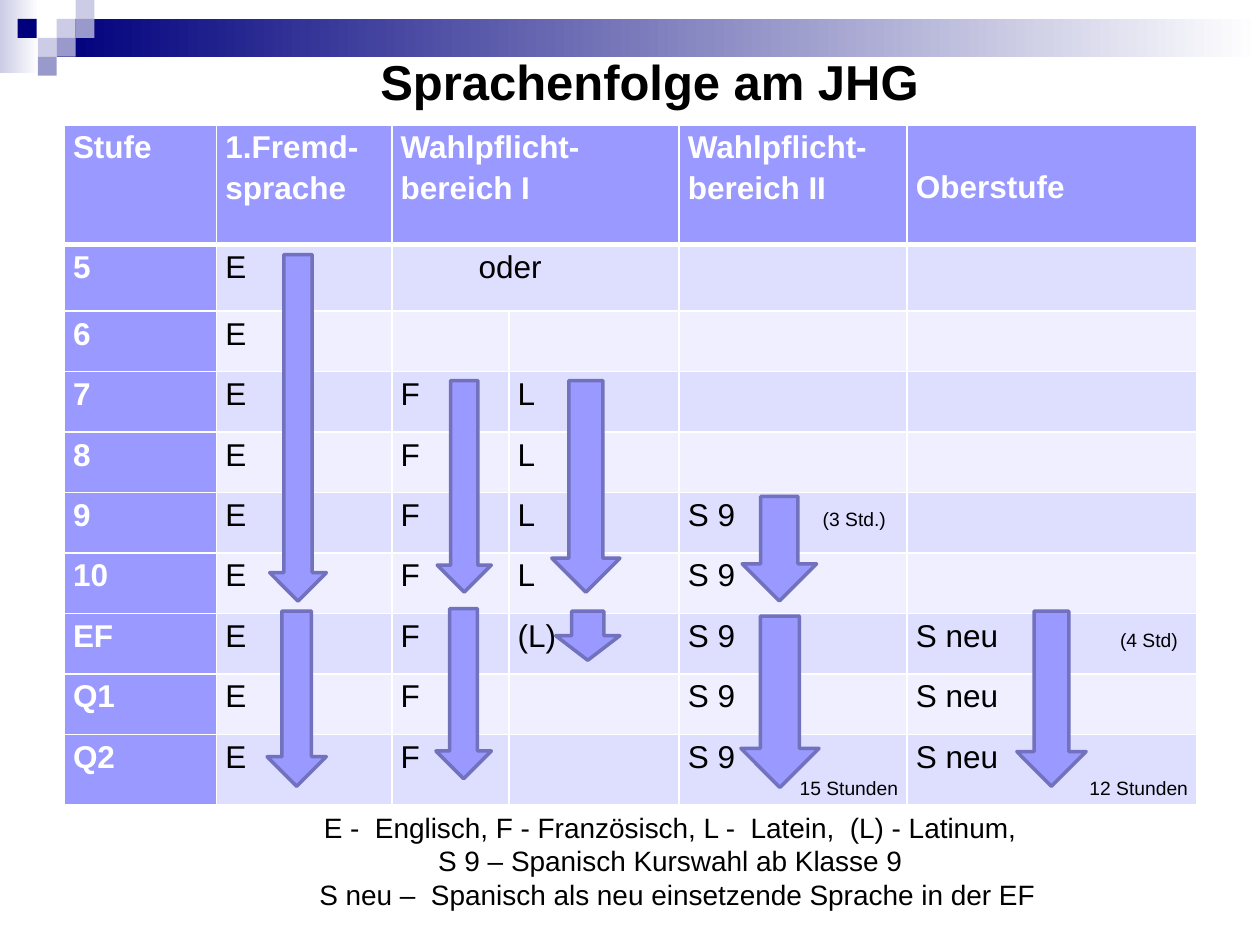
from lxml import etree
from pptx import Presentation
from pptx.dml.color import RGBColor
from pptx.enum.shapes import MSO_SHAPE
from pptx.enum.text import MSO_ANCHOR, PP_ALIGN
from pptx.oxml.ns import qn
from pptx.util import Inches, Pt

COLORS = {
    "navy": "00007D", "lavender": "CCCCE6", "violet": "9999CC", "white": "FFFFFF",
    "black": "000000", "accent": "9999FF", "outline": "7171BD",
    "odd_band": "DEDEFF", "even_band": "EFEFFF",
}


def add_run(paragraph, text, size, color="black", bold=False):
    run = paragraph.add_run()
    run.text = text
    run.font.name = "Arial"
    run.font.size = Pt(size)
    run.font.bold = bold
    run.font.color.rgb = RGBColor.from_string(COLORS[color])


def set_border(cell, side, width):
    """Draw a white line on one side (L, R, T or B) of a cell, ahead of its fill."""
    properties = cell._tc.get_or_add_tcPr()
    line = etree.Element(qn(f"a:ln{side}"), w=str(Pt(width)))
    fill = etree.SubElement(line, qn("a:solidFill"))
    etree.SubElement(fill, qn("a:srgbClr"), val=COLORS["white"])
    position = sum(child.tag.startswith(qn("a:ln")) for child in properties)
    properties.insert(position, line)


presentation = Presentation()
presentation.slide_width = Inches(10)
presentation.slide_height = Inches(7.5)
slide = presentation.slides.add_slide(presentation.slide_layouts[6])

# Header decoration: two fading bars, then small squares
bars = [(0, 0, 0.31, 0.58, "lavender"), (0.45, 0.15, 9.55, 0.3, "navy")]
squares = [
    (0.45, 0.15, "lavender"), (0.6, 0, "lavender"), (0.6, 0.15, "violet"),
    (0.3, 0.3, "lavender"), (0.14, 0.15, "navy"), (0.45, 0.3, "violet"),
    (0.3, 0.45, "violet"),
]
for left, top, width, height, color in bars:
    bar = slide.shapes.add_shape(
        MSO_SHAPE.RECTANGLE, Inches(left), Inches(top), Inches(width), Inches(height))
    bar.shadow.inherit = False
    bar.line.fill.background()
    bar.fill.gradient()
    bar.fill.gradient_angle = 0
    for stop, stop_color, position in zip(bar.fill.gradient_stops, (color, "white"), (0, 1)):
        stop.color.rgb = RGBColor.from_string(COLORS[stop_color])
        stop.position = position
for left, top, color in squares:
    square = slide.shapes.add_shape(
        MSO_SHAPE.RECTANGLE, Inches(left), Inches(top), Inches(0.15), Inches(0.15))
    square.shadow.inherit = False
    square.line.fill.background()
    square.fill.solid()
    square.fill.fore_color.rgb = RGBColor.from_string(COLORS[color])

title = slide.shapes.add_textbox(Inches(0.51), Inches(0.29), Inches(9.29), Inches(0.71))
title.text_frame.word_wrap = True
title.text_frame.vertical_anchor = MSO_ANCHOR.MIDDLE
title_paragraph = title.text_frame.paragraphs[0]
title_paragraph.alignment = PP_ALIGN.CENTER
add_run(title_paragraph, "Sprachenfolge am JHG", 28, bold=True)

# Language table: a line break starts a paragraph, a tab leads to a small note
rows = [
    ["Stufe", "1.Fremd-sprache", "Wahlpflicht-\nbereich I", "",
     "Wahlpflicht-\nbereich II", "Oberstufe"],
    ["5", "E", "oder", "", "", ""],
    ["6", "E", "", "", "", ""],
    ["7", "E", "F", "L", "", ""],
    ["8", "E", "F", "L", "", ""],
    ["9", "E", "F", "L", "S 9\t(3 Std.)", ""],
    ["10", "E", "F", "L", "S 9", ""],
    ["EF", "E", "F", "(L)", "S 9", "S neu\t(4 Std)"],
    ["Q1", "E", "F", "", "S 9", "S neu"],
    ["Q2", "E", "F", "", "S 9\n15 Stunden", "S neu\n12 Stunden"],
]
column_widths = [1.21, 1.39, 0.93, 1.35, 1.81, 2.3]
row_heights = [0.95, 0.53] + [0.48] * 7 + [0.56]
note_tabs = {4: 1.07, 5: 1.62}

table = slide.shapes.add_table(
    len(rows), len(column_widths), Inches(0.51), Inches(0.99),
    Inches(8.99), Inches(5.38)).table
for column, width in zip(table.columns, column_widths):
    column.width = Inches(width)
for row, height in zip(table.rows, row_heights):
    row.height = Inches(height)

for row_index, texts in enumerate(rows):
    for column_index, text in enumerate(texts):
        cell = table.cell(row_index, column_index)
        heading = row_index == 0 or column_index == 0
        band = "odd_band" if row_index % 2 else "even_band"
        cell.fill.solid()
        cell.fill.fore_color.rgb = RGBColor.from_string(COLORS["accent" if heading else band])
        cell.margin_left = cell.margin_right = Inches(0.07)
        cell.margin_top = cell.margin_bottom = 0
        for side in "LRTB":
            thick = (row_index, side) in ((0, "B"), (1, "T"))
            set_border(cell, side, 3 if thick else 1)
        if not text:
            continue
        for line_index, line in enumerate(text.split("\n")):
            frame = cell.text_frame
            paragraph = frame.add_paragraph() if line_index else frame.paragraphs[0]
            paragraph.line_spacing = 1.15
            hours = line_index > 0 and not heading
            if hours:
                paragraph.alignment = PP_ALIGN.RIGHT
            main, tab, note = line.partition("\t")
            add_run(paragraph, main + tab, 11 if hours else 18,
                    "white" if heading else "black", heading)
            if note:
                tabs = etree.SubElement(paragraph._p.get_or_add_pPr(), qn("a:tabLst"))
                etree.SubElement(tabs, qn("a:tab"), algn="l",
                                 pos=str(Inches(note_tabs[column_index])))
                add_run(paragraph, note, 11)

for row_index in (0, 1):
    table.cell(row_index, 2).merge(table.cell(row_index, 3))
table.cell(0, 5).vertical_anchor = MSO_ANCHOR.MIDDLE
either_or = table.cell(1, 2).text_frame.paragraphs[0]
either_or._p.get_or_add_pPr().set("marL", str(Inches(0.62)))

legend = slide.shapes.add_textbox(Inches(1.54), Inches(6.38), Inches(7.56), Inches(0.91))
legend.text_frame.word_wrap = True
legend_lines = [
    "E -  Englisch, F - Französisch, L -  Latein,  (L) - Latinum,",
    "S 9 – Spanisch Kurswahl ab Klasse 9",
    "S neu –  Spanisch als neu einsetzende Sprache in der EF",
]
for index, line in enumerate(legend_lines):
    frame = legend.text_frame
    paragraph = frame.add_paragraph() if index else frame.paragraphs[0]
    paragraph.alignment = PP_ALIGN.CENTER
    add_run(paragraph, line, 16)
paragraph._p.get_or_add_pPr().set("marL", str(Inches(0.11)))

# Arrows showing how long each language runs
arrows = [
    (2.14, 2.02, 0.45, 2.75), (3.47, 3.02, 0.43, 1.68), (4.38, 3.02, 0.54, 1.68),
    (5.89, 3.94, 0.59, 0.83), (4.41, 4.85, 0.51, 0.39), (5.88, 4.89, 0.62, 1.36),
    (2.12, 4.85, 0.47, 1.39), (3.46, 4.83, 0.44, 1.35), (8.07, 4.85, 0.55, 1.39),
]
for bounds in arrows:
    arrow = slide.shapes.add_shape(MSO_SHAPE.DOWN_ARROW, *map(Inches, bounds))
    arrow.shadow.inherit = False
    arrow.fill.solid()
    arrow.fill.fore_color.rgb = RGBColor.from_string(COLORS["accent"])
    arrow.line.color.rgb = RGBColor.from_string(COLORS["outline"])
    arrow.line.width = Pt(2)

presentation.save("out.pptx")
